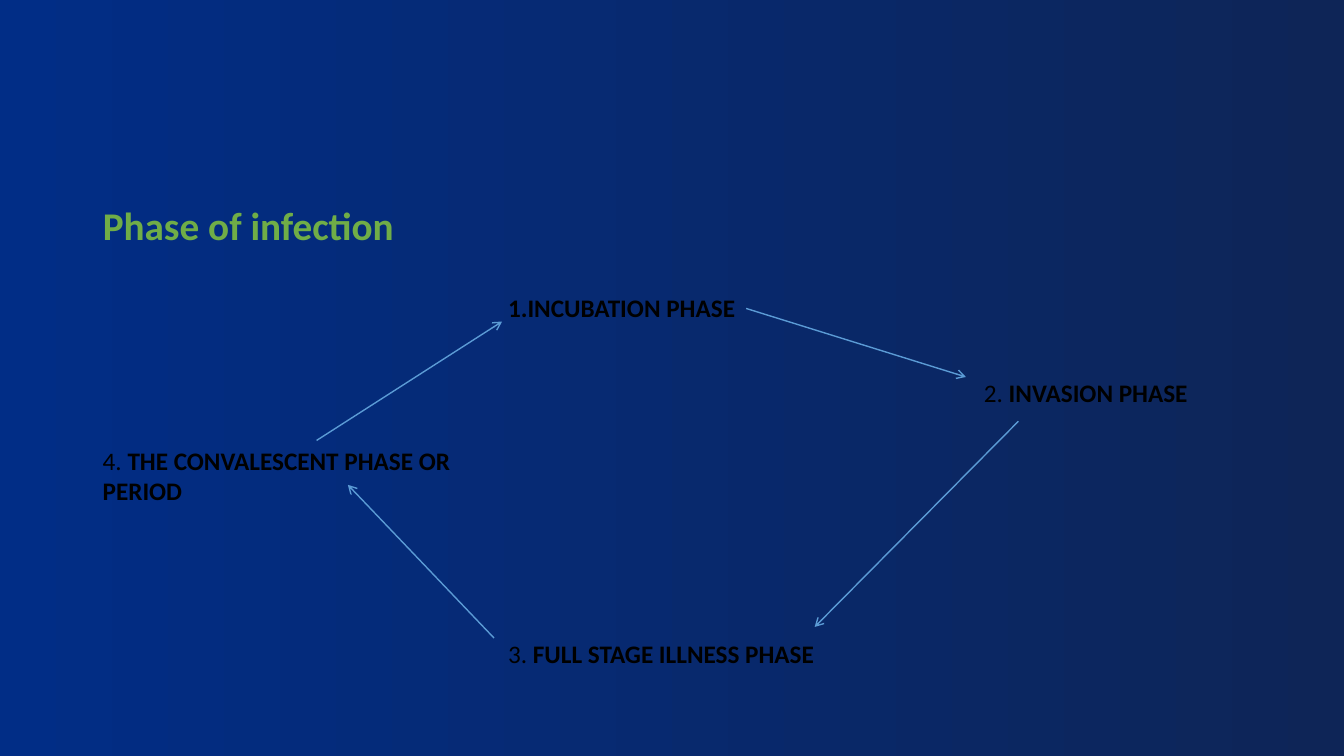
import pptx
import pptx.util
from pptx.dml.color import RGBColor
from pptx.enum.shapes import MSO_CONNECTOR
from pptx.enum.text import MSO_ANCHOR, MSO_AUTO_SIZE, PP_ALIGN
from pptx.oxml.ns import qn
from lxml import etree

NAVY = RGBColor(0x01, 0x2D, 0x86)
DUSK = RGBColor(0x0E, 0x25, 0x57)
GREEN = RGBColor(0x70, 0xAD, 0x47)
BLACK = RGBColor(0, 0, 0)
BLUE = RGBColor(0x5B, 0x9B, 0xD5)
FONT = "Calibri"
SCALE = 9144  # EMU in one px, 100 px to the inch

# box, number, phase name
PHASES = [
    ((494, 285, 279, 40), "1.", "INCUBATION PHASE"),
    ((966, 369, 301, 40), "2. ", "INVASION PHASE"),
    ((494, 628, 351, 40), "3. ", "FULL STAGE ILLNESS PHASE"),
    ((92, 437, 396, 71), "4. ", "THE CONVALESCENT PHASE OR PERIOD"),
]
# start and end, measured from the corner of the cycle
ARROWS = [
    (648, 21, 866, 89),
    (918, 133, 716, 337),
    (398, 348, 253, 196),
    (222, 152, 406, 34),
]


def px(*sizes):
    return [pptx.util.Emu(size * SCALE) for size in sizes]


def paint(slide):
    """Fill the background with a gradient from left to right."""
    fill = slide.background.fill
    fill.gradient()
    fill.gradient_angle = 0
    for stop, color in zip(fill.gradient_stops, (NAVY, DUSK)):
        stop.color.rgb = color


def style(font, size, color):
    font.name = FONT
    font.size = pptx.util.Pt(size)
    font.color.rgb = color


def add_title(slide, box, text):
    title = slide.shapes.title
    title.left, title.top, title.width, title.height = px(*box)
    frame = title.text_frame
    frame.text = text
    frame.word_wrap = True
    frame.auto_size = MSO_AUTO_SIZE.NONE
    frame.vertical_anchor = MSO_ANCHOR.TOP
    para = frame.paragraphs[0]
    para.alignment = PP_ALIGN.LEFT
    para.line_spacing = 0.9
    para.space_before = pptx.util.Pt(10)
    style(para.font, 28, GREEN)
    para.font.bold = True


def add_phase(slide, box, number, name):
    frame = slide.shapes.add_textbox(*px(*box)).text_frame
    frame.word_wrap = True
    frame.auto_size = MSO_AUTO_SIZE.SHAPE_TO_FIT_TEXT
    para = frame.paragraphs[0]
    style(para.font, 18, BLACK)
    if number.endswith(" "):
        para.add_run().text = number
        run = para.add_run()
        run.text = name
        run.font.bold = True
    else:
        para.add_run().text = number + name
        para.font.bold = True


def add_arrow(slide, ends):
    arrow = slide.shapes.add_connector(MSO_CONNECTOR.STRAIGHT, *px(*ends))
    arrow.line.color.rgb = BLUE
    arrow.line.width = pptx.util.Pt(1)
    etree.SubElement(arrow.line._get_or_add_ln(), qn("a:tailEnd"), type="arrow")
    etree.SubElement(arrow._element.spPr, qn("a:effectLst"))


def add_cycle(slide, left, top):
    """Place the four phases and the arrows that join them."""
    for box, number, name in PHASES:
        add_phase(slide, box, number, name)
    for x1, y1, x2, y2 in ARROWS:
        add_arrow(slide, (left + x1, top + y1, left + x2, top + y2))


def main():
    deck = pptx.Presentation()
    deck.slide_width, deck.slide_height = px(1333, 750)
    slide = deck.slides.add_slide(deck.slide_layouts[5])
    paint(slide)
    add_title(slide, (92, 200, 1150, 476), "Phase of infection")
    add_cycle(slide, 92, 285)
    deck.save("out.pptx")


if __name__ == "__main__":
    main()
